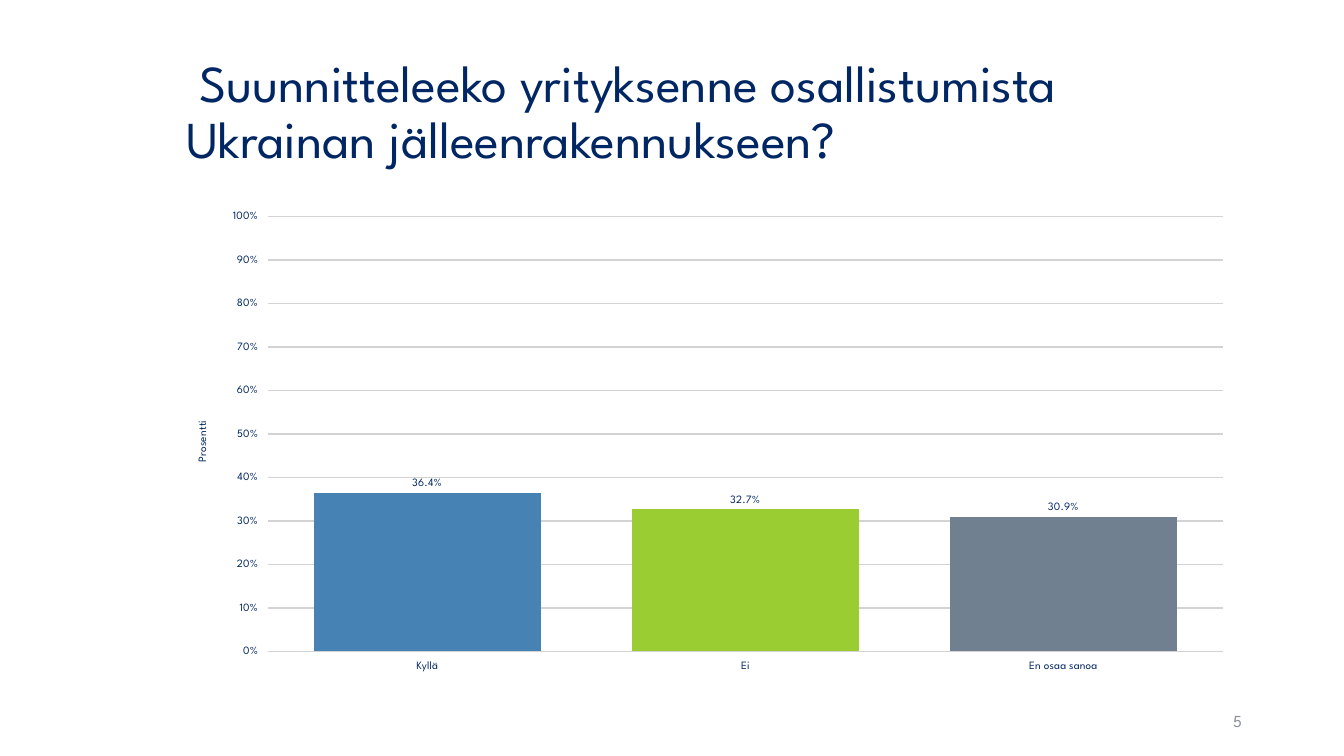
import pptx
import pptx.chart.data
import pptx.dml.color
import pptx.enum.chart
import pptx.enum.text
import pptx.util
from dataclasses import dataclass

Pt = pptx.util.Pt
Align = pptx.enum.text.PP_ALIGN


@dataclass(frozen=True)
class Theme:
    font: str = "League Spartan"
    navy: str = "002663"
    muted: str = "8C8E9F"
    grid: str = "D3D3D3"
    bars: tuple = ("4682B4", "9ACD32", "708090")
    title_size: int = 37
    number_size: int = 12
    chart_size: int = 18
    label_size: int = 8


THEME = Theme()
ANSWERS = {"Kyllä": 0.364, "Ei": 0.327, "En osaa sanoa": 0.309}


def rgb(color):
    return pptx.dml.color.RGBColor.from_string(color)


def set_font(font, size, color):
    font.name = THEME.font
    font.size = Pt(size)
    font.bold = False
    font.color.rgb = rgb(color)


def add_text(slide, box, text, size, color, align=Align.LEFT, spacing=1.0):
    shape = slide.shapes.add_textbox(*map(Pt, box))
    frame = shape.text_frame
    frame.word_wrap = True
    frame.vertical_anchor = pptx.enum.text.MSO_ANCHOR.MIDDLE
    frame.text = text
    paragraph = frame.paragraphs[0]
    paragraph.alignment = align
    paragraph.line_spacing = spacing
    set_font(paragraph.runs[0].font, size, color)


def style_axis(axis):
    axis.format.line.fill.background()
    set_font(axis.tick_labels.font, THEME.label_size, THEME.navy)


def style_value_axis(axis, title):
    style_axis(axis)
    axis.minimum_scale = 0
    axis.maximum_scale = 1
    axis.major_unit = 0.1
    axis.tick_labels.number_format = "0%"
    axis.tick_labels.number_format_is_linked = False
    axis.has_major_gridlines = True
    grid_line = axis.major_gridlines.format.line
    grid_line.color.rgb = rgb(THEME.grid)
    grid_line.width = Pt(1)
    axis.axis_title.text_frame.text = title
    title_run = axis.axis_title.text_frame.paragraphs[0].runs[0]
    set_font(title_run.font, THEME.label_size, THEME.navy)


def style_bars(plot):
    plot.gap_width = 40
    plot.overlap = -2
    plot.vary_by_categories = False
    series = plot.series[0]
    series.format.fill.solid()
    series.format.fill.fore_color.rgb = rgb(THEME.bars[0])
    for index, color in enumerate(THEME.bars):
        fill = series.points[index].format.fill
        fill.solid()
        fill.fore_color.rgb = rgb(color)
    labels = series.data_labels
    labels.show_value = True
    labels.number_format = "0.0%"
    labels.number_format_is_linked = False
    labels.position = pptx.enum.chart.XL_LABEL_POSITION.OUTSIDE_END
    set_font(labels.font, THEME.label_size, THEME.navy)


def add_answer_chart(slide, box, answers):
    data = pptx.chart.data.CategoryChartData()
    data.categories = list(answers)
    data.add_series("Series 1", list(answers.values()))
    column_type = pptx.enum.chart.XL_CHART_TYPE.COLUMN_CLUSTERED
    chart = slide.shapes.add_chart(column_type, *map(Pt, box), data).chart
    chart.has_legend = False
    chart.has_title = False
    set_font(chart.font, THEME.chart_size, THEME.navy)
    style_axis(chart.category_axis)
    style_value_axis(chart.value_axis, "Prosentti")
    style_bars(chart.plots[0])


def main():
    presentation = pptx.Presentation()
    presentation.slide_width = Pt(960)
    presentation.slide_height = Pt(540)
    slide = presentation.slides.add_slide(presentation.slide_layouts[6])
    add_text(slide, (126, 28.8, 762.5, 104.4),
             " Suunnitteleeko yrityksenne osallistumista Ukrainan jälleenrakennukseen?",
             THEME.title_size, THEME.navy, spacing=0.9)
    add_answer_chart(slide, (126, 144, 762.5, 342.7), ANSWERS)
    add_text(slide, (678.2, 500.4, 216, 28.8), "5",
             THEME.number_size, THEME.muted, Align.RIGHT)
    presentation.save("out.pptx")


if __name__ == "__main__":
    main()
